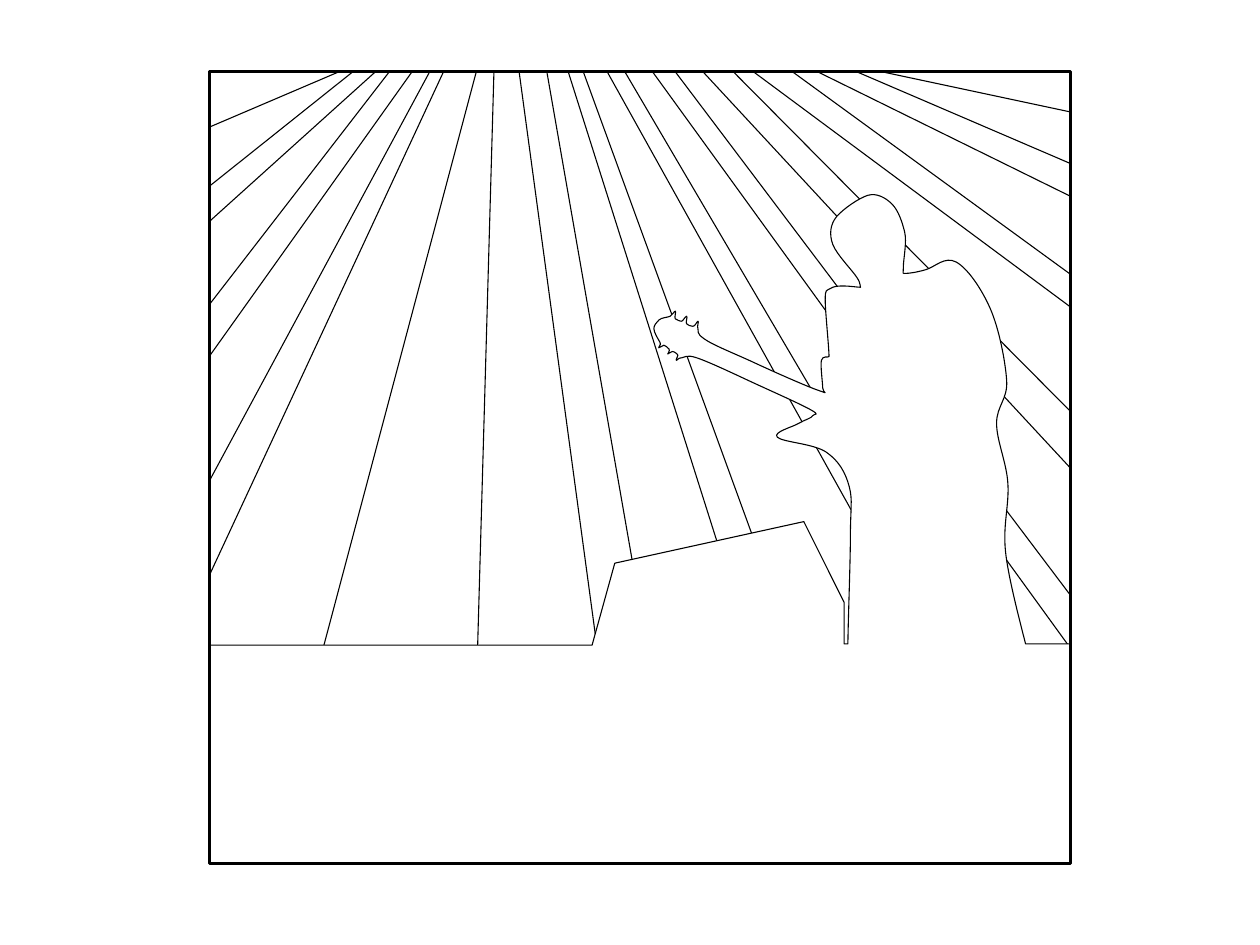
from pptx import Presentation
from pptx.dml.color import RGBColor
from pptx.enum.shapes import MSO_SHAPE as Shape
from pptx.oxml.ns import qn
from pptx.oxml.xmlchemy import OxmlElement
from pptx.util import Pt

PX = 9144  # 100 px to the inch
LEFT, TOP, RIGHT, BOTTOM = 166, 57, 850, 685
FLOOR, BEAM_END = 511, 515


def style(shape, fill, line_width):
    shape.shadow.inherit = False
    if fill:
        shape.fill.solid()
        shape.fill.fore_color.rgb = RGBColor.from_string(fill)
    else:
        shape.fill.background()
    shape.line.color.rgb = RGBColor.from_string("000000")
    shape.line.width = Pt(line_width)


def add_outline(shapes, points, fill=None):
    builder = shapes.build_freeform(*points[0], scale=PX)
    builder.add_line_segments(points[1:], close=True)
    shape = builder.convert_to_shape()
    style(shape, fill, 0.63)
    return shape


presentation = Presentation()
presentation.slide_width = 1000 * PX
presentation.slide_height = 750 * PX
slide = presentation.slides.add_slide(presentation.slide_layouts[6])
scene = slide.shapes.add_group_shape().shapes

# Beams to a side wall: wall, two x at the top, two y on the wall
for wall, start, end, low, high in [
    (RIGHT, 680, 700, 130, 89), (RIGHT, 582, 598, 327, 244),
    (RIGHT, 536, 558, 473, 372), (RIGHT, 629, 649, 218, 156),
    (LEFT, 341, 327, 382, 283), (LEFT, 309, 298, 242, 176),
    (LEFT, 280, 269, 148, 101),
]:
    add_outline(scene, [(start, TOP), (wall, low), (wall, high), (end, TOP)])

# Beams to the floor: two x at the top, two x at the lower end
for start, end, low_start, low_end in [
    (392, 412, 379, 474), (434, 451, 514, 596),
    (463, 482, 630, 737), (496, 518, 765, 850),
]:
    add_outline(scene, [(start, TOP), (low_start, BEAM_END), (low_end, BEAM_END), (end, TOP)])
add_outline(scene, [(352, TOP), (LEFT, 457), (LEFT, 535), (251, 535), (378, TOP)])

# Three tuning pegs on each side of the headstock
lower_pegs = [(x - 7 * peg, y - 5 * peg) for peg in range(3)
              for x, y in [(541, 284), (537, 286), (538, 282)]]
upper_pegs = [(x + 9 * peg, y + 4 * peg) for peg in range(3)
              for x, y in [(532, 251), (536, 247), (536, 253)]]

# Smooth runs of the guitarist, meeting at sharp corners
leg_and_guitar = [
    (673, FLOOR), (675, 425), (674, 386), (656, 359), (617, 347), (634, 336),
    (645, 330), (643, 325), (594, 302), (553, 284), *lower_pegs, (519, 261),
    (523, 254), *upper_pegs, (559, 269), (599, 288), (650, 310), (653, 308),
    (652, 286), (658, 283),
]
arm = [(658, 283), (655, 238), (659, 229), (670, 227), (683, 228)]
head_and_back = [
    (683, 228), (680, 220), (661, 194), (664, 172), (689, 155), (708, 162),
    (718, 184), (717, 212), (719, 217), (735, 214), (759, 208), (786, 245),
    (799, 302), (791, 336), (800, 384), (798, 437), (814, FLOOR),
]

# Each stretch of a run becomes two handles and an end point
curves = []
for run in (leg_and_guitar, arm, head_and_back):
    padded = [run[0], *run, run[-1]]
    for before, start, end, after in zip(padded, padded[1:], padded[2:], padded[3:]):
        curves += [
            tuple(round(s + (e - b) / 6, 2) for b, s, e in zip(before, start, end)),
            tuple(round(e - (a - s) / 6, 2) for s, e, a in zip(start, end, after)),
            end,
        ]

stage = [(LEFT, 512), (470, 512), (488, 447), (638, 414), (670, 478), (670, FLOOR), (673, FLOOR)]
ground = [(RIGHT, FLOOR), (RIGHT, BOTTOM), (LEFT, BOTTOM)]
silhouette = add_outline(scene, stage + curves + ground, "FFFFFF")
segments = list(silhouette.element.iter(qn("a:lnTo")))
first_curve = len(stage) - 1
for index in range(first_curve, first_curve + len(curves), 3):
    curve = OxmlElement("a:cubicBezTo")
    segments[index].addprevious(curve)
    for segment in segments[index:index + 3]:
        curve.append(segment[0])
        segment.getparent().remove(segment)

frame = scene.add_shape(
    Shape.RECTANGLE, LEFT * PX, TOP * PX, (RIGHT - LEFT) * PX, (BOTTOM - TOP) * PX)
style(frame, None, 1.75)

presentation.save("out.pptx")
